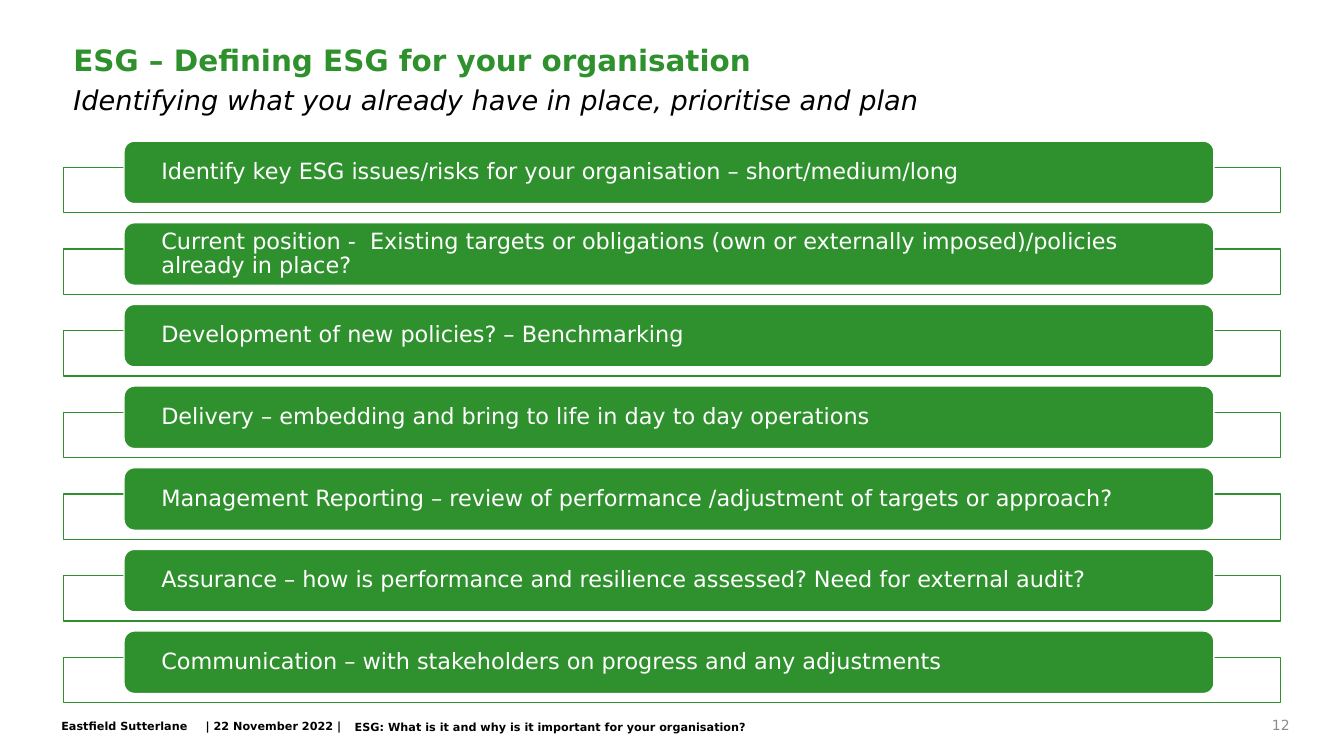
import pptx
import pptx.dml.color
import pptx.enum.shapes
import pptx.enum.text
import pptx.oxml.ns
import pptx.util
import lxml.etree

Inches = pptx.util.Inches
Pt = pptx.util.Pt
RGBColor = pptx.dml.color.RGBColor
Shapes = pptx.enum.shapes.MSO_SHAPE
Anchor = pptx.enum.text.MSO_ANCHOR
Align = pptx.enum.text.PP_ALIGN

GREEN = RGBColor(0x2F, 0x91, 0x2D)
WHITE = RGBColor(0xFF, 0xFF, 0xFF)
BLACK = RGBColor(0x00, 0x00, 0x00)
GREY = RGBColor(0x8C, 0x8C, 0x8C)
FONT_NAME = "DejaVu Sans"

TITLE_FORMAT = {"size": Pt(21), "bold": True}
SUBTITLE_FORMAT = {"size": Pt(19.4), "italic": True}
STEP_FORMAT = {"size": Pt(16)}
FOOTER_FORMAT = {"size": Pt(8), "bold": True}
NUMBER_FORMAT = {"size": Pt(10)}
STEP_FRAME = {
    "word_wrap": True,
    "vertical_anchor": Anchor.MIDDLE,
    "margin_left": Inches(0.34),
    "margin_right": Inches(0.34),
    "margin_top": Inches(0.02),
    "margin_bottom": Inches(0.02),
}

STEPS = [
    "Identify key ESG issues/risks for your organisation – short/medium/long",
    "Current position -  Existing targets or obligations (own or externally imposed)/policies already in place?",
    "Development of new policies? – Benchmarking",
    "Delivery – embedding and bring to life in day to day operations",
    "Management Reporting – review of performance /adjustment of targets or approach?",
    "Assurance – how is performance and resilience assessed? Need for external audit?",
    "Communication – with stakeholders on progress and any adjustments",
]


def apply_format(target, values):
    for name, value in values.items():
        setattr(target, name, value)


def write_text(shape, text, font_format, color, frame_format, paragraph_format):
    apply_format(shape.text_frame, frame_format)
    paragraph = shape.text_frame.paragraphs[0]
    paragraph.text = text
    apply_format(paragraph, paragraph_format)
    apply_format(paragraph.font, {"name": FONT_NAME, **font_format})
    paragraph.font.color.rgb = color


def add_text(slide, box, text, font_format, color=BLACK, anchor=Anchor.TOP, **paragraph_format):
    shape = slide.shapes.add_textbox(*map(Inches, box))
    frame_format = {"word_wrap": True, "vertical_anchor": anchor}
    write_text(shape, text, font_format, color, frame_format, paragraph_format)


def add_block(slide, kind, box, fill_color, line_color):
    shape = slide.shapes.add_shape(kind, *map(Inches, box))
    shape.shadow.inherit = False
    shape.fill.solid()
    shape.fill.fore_color.rgb = fill_color
    shape.line.color.rgb = line_color
    shape.line.width = Pt(1)
    return shape


def set_opacity(shape, percent):
    qn = pptx.oxml.ns.qn
    color = shape.fill._xPr.find(qn("a:solidFill")).find(qn("a:srgbClr"))
    lxml.etree.SubElement(color, qn("a:alpha")).set("val", str(percent * 1000))


def add_heading(slide, box):
    left, top, width, height = box
    add_text(slide, (left, top, width, 0.36), "ESG – Defining ESG for your organisation",
             TITLE_FORMAT, GREEN, Anchor.MIDDLE, line_spacing=0.9)
    add_text(slide, (left, top + 0.37, width, height - 0.37),
             "Identifying what you already have in place, prioritise and plan",
             SUBTITLE_FORMAT, line_spacing=0.9)


def add_steps(slide, box):
    left, top, width, height = box
    bar_height = 0.62
    frame_offset, frame_height = 0.26, 0.45
    pitch = (height - frame_offset - frame_height) / (len(STEPS) - 1)
    for index, text in enumerate(STEPS):
        step_top = top + index * pitch
        frame = add_block(slide, Shapes.RECTANGLE,
                          (left, step_top + frame_offset, width, frame_height), WHITE, GREEN)
        set_opacity(frame, 90)
        bar = add_block(slide, Shapes.ROUNDED_RECTANGLE,
                        (left + 0.6, step_top, width - 1.26, bar_height), GREEN, WHITE)
        write_text(bar, text, STEP_FORMAT, WHITE, STEP_FRAME,
                   {"line_spacing": 0.9, "alignment": Align.LEFT})


def add_footer(slide, box):
    left, top, width, height = box
    add_text(slide, (left, top + 0.05, 2.31, 0.24), "Eastfield Sutterlane", FOOTER_FORMAT)
    add_text(slide, (left + 1.43, top + 0.05, 2.19, 0.24), "| 22 November 2022 |", FOOTER_FORMAT)
    add_text(slide, (left + 2.91, top + 0.06, 8.23, 0.21),
             "ESG: What is it and why is it important for your organisation?", FOOTER_FORMAT)
    add_text(slide, (left + width - 1.16, top, 1.16, height), "12",
             NUMBER_FORMAT, GREY, Anchor.MIDDLE, alignment=Align.RIGHT)


def main():
    presentation = pptx.Presentation()
    presentation.slide_width = Inches(13.33)
    presentation.slide_height = Inches(7.5)
    slide = presentation.slides.add_slide(presentation.slide_layouts[6])
    add_footer(slide, (0.51, 7.04, 12.38, 0.3))
    add_heading(slide, (0.63, 0.44, 12.07, 0.78))
    add_steps(slide, (0.63, 1.4, 12.07, 5.57))
    presentation.save("out.pptx")


if __name__ == "__main__":
    main()
